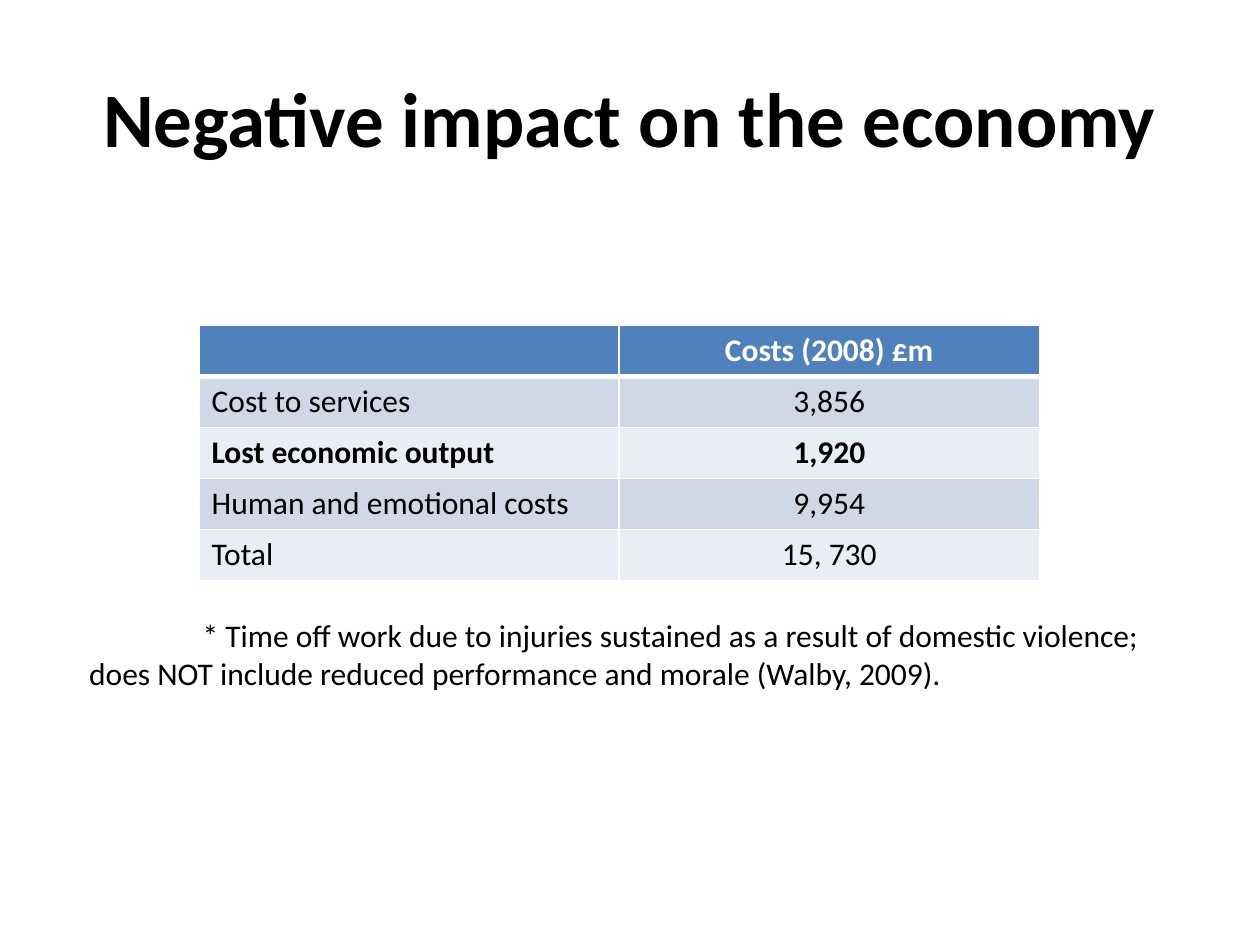
import pptx
import pptx.dml.color
import pptx.enum.text
import pptx.oxml
import pptx.oxml.ns
import pptx.util

Inches = pptx.util.Inches
Pt = pptx.util.Pt
ALIGN = pptx.enum.text.PP_ALIGN
ANCHOR = pptx.enum.text.MSO_ANCHOR

COLORS = {
    "text": "000000",
    "white": "FFFFFF",
    "header": "4F81BD",
    "odd": "D0D8E8",
    "even": "E9EDF4",
}
COSTS = [
    ("", "Costs (2008) £m"),
    ("Cost to services", "3,856"),
    ("Lost economic output", "1,920"),
    ("Human and emotional costs", "9,954"),
    ("Total", "15, 730"),
]
BOLD_ROWS = (0, 2)


class SlideBuilder:
    """Holds the style and the current slide, and adds each kind of element."""

    def __init__(self, slide, font="Calibri"):
        self.slide = slide
        self.font = font

    def color(self, name):
        return pptx.dml.color.RGBColor.from_string(COLORS[name])

    def run(self, paragraph, text, size, color="text", bold=False):
        run = paragraph.add_run()
        run.text = text
        run.font.name = self.font
        run.font.size = Pt(size)
        run.font.bold = bold
        run.font.color.rgb = self.color(color)

    def text(self, box, text, size, bold=False, align=ALIGN.LEFT,
             anchor=ANCHOR.TOP, margin=0, indent=0):
        frame = self.slide.shapes.add_textbox(*map(Inches, box)).text_frame
        frame.word_wrap = True
        frame.vertical_anchor = anchor
        paragraph = frame.paragraphs[0]
        paragraph.alignment = align
        properties = paragraph._p.get_or_add_pPr()
        properties.set("marL", str(Inches(margin)))
        properties.set("indent", str(Inches(indent)))
        self.run(paragraph, text, size, bold=bold)

    def borders(self, cell, bottom):
        properties = cell._tc.get_or_add_tcPr()
        widths = {"lnL": 1, "lnR": 1, "lnT": 1, "lnB": bottom}
        for index, (side, width) in enumerate(widths.items()):
            properties.insert(index, pptx.oxml.parse_xml(
                f'<a:{side} {pptx.oxml.ns.nsdecls("a")} w="{Pt(width)}">'
                f'<a:solidFill><a:srgbClr val="{COLORS["white"]}"/></a:solidFill>'
                f'</a:{side}>'))

    def table(self, box, rows, bold_rows, size):
        frame = self.slide.shapes.add_table(
            len(rows), len(rows[0]), *map(Inches, box))
        for r, row in enumerate(rows):
            header = r == 0
            fill = "header" if header else "odd" if r % 2 else "even"
            for c, value in enumerate(row):
                cell = frame.table.cell(r, c)
                cell.fill.solid()
                cell.fill.fore_color.rgb = self.color(fill)
                self.borders(cell, bottom=3 if header else 1)
                if value:
                    paragraph = cell.text_frame.paragraphs[0]
                    paragraph.alignment = ALIGN.CENTER if c else ALIGN.LEFT
                    self.run(paragraph, value, size,
                             "white" if header else "text", r in bold_rows)


def main():
    deck = pptx.Presentation()
    deck.slide_width = Inches(10)
    deck.slide_height = Inches(7.5)
    builder = SlideBuilder(deck.slides.add_slide(deck.slide_layouts[6]))
    builder.text((0.5, 0.3, 9, 1.25), "Negative impact on the economy", 44,
                 bold=True, align=ALIGN.CENTER, anchor=ANCHOR.MIDDLE)
    builder.text((0.5, 4.84, 9, 0.75),
                 "* Time off work due to injuries sustained as a result of domestic "
                 "violence; does NOT include reduced performance and morale "
                 "(Walby, 2009).", 18, margin=0.11, indent=0.9)
    builder.table((1.58, 2.58, 6.67, 2.03), COSTS, BOLD_ROWS, 18)
    deck.save("out.pptx")


if __name__ == "__main__":
    main()
